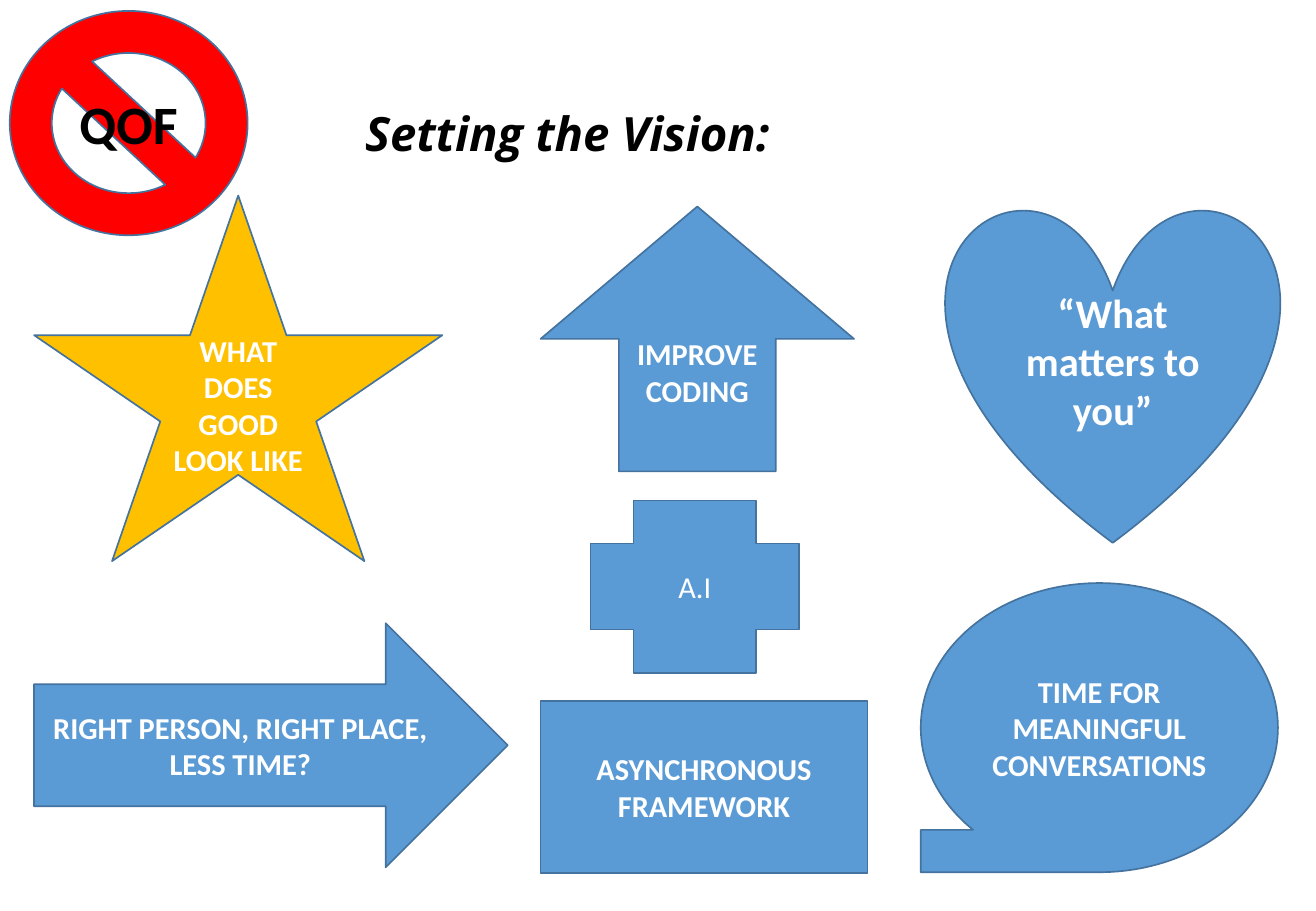
from dataclasses import dataclass

from pptx import Presentation
from pptx.dml.color import RGBColor
from pptx.enum.shapes import MSO_SHAPE
from pptx.enum.text import MSO_ANCHOR, PP_ALIGN
from pptx.util import Pt


@dataclass(frozen=True)
class Theme:
    blue: str = "5B9BD5"
    outline: str = "43739E"
    gold: str = "FFC000"
    red: str = "FF0000"
    white: str = "FFFFFF"
    black: str = "000000"
    body_font: str = "Calibri"
    title_font: str = "Open Sans"
    label_size: float = 18
    quote_size: float = 24
    title_size: float = 28
    sign_size: float = 32
    outline_width: float = 1


THEME = Theme()


def write_text(frame, text, *, size=THEME.label_size, color=THEME.white,
               font=THEME.body_font, bold=True, italic=False, line_spacing=None):
    frame.word_wrap = True
    frame.vertical_anchor = MSO_ANCHOR.MIDDLE
    frame.text = text
    for paragraph in frame.paragraphs:
        paragraph.alignment = PP_ALIGN.CENTER
        paragraph.line_spacing = line_spacing
        for run in paragraph.runs:
            run.font.name = font
            run.font.size = Pt(size)
            run.font.bold = bold
            run.font.italic = italic
            run.font.color.rgb = RGBColor.from_string(color)


def add_title(slide, text, box):
    title = slide.shapes.add_textbox(*map(Pt, box))
    write_text(title.text_frame, text, size=THEME.title_size, color=THEME.black,
               font=THEME.title_font, italic=True, line_spacing=0.9)


def add_symbol(slide, kind, text, box, fill=THEME.blue, **text_format):
    symbol = slide.shapes.add_shape(kind, *map(Pt, box))
    symbol.shadow.inherit = False
    symbol.fill.solid()
    symbol.fill.fore_color.rgb = RGBColor.from_string(fill)
    symbol.line.color.rgb = RGBColor.from_string(THEME.outline)
    symbol.line.width = Pt(THEME.outline_width)
    write_text(symbol.text_frame, text, **text_format)
    return symbol


def flip_horizontally(symbol):
    symbol._element.spPr.xfrm.set("flipH", "1")


def main():
    presentation = Presentation()
    presentation.slide_width = Pt(780)
    presentation.slide_height = Pt(540)
    slide = presentation.slides.add_slide(presentation.slide_layouts[6])

    add_title(slide, "Setting the Vision:", (0, 28.8, 672.5, 104.4))
    add_symbol(slide, MSO_SHAPE.NO_SYMBOL, "QOF", (5.8, 6.5, 141, 133),
               fill=THEME.red, size=THEME.sign_size, color=THEME.black)
    add_symbol(slide, MSO_SHAPE.STAR_5_POINT, "WHAT DOES GOOD LOOK LIKE",
               (20.2, 115.9, 242, 216.7), fill=THEME.gold)
    add_symbol(slide, MSO_SHAPE.RIGHT_ARROW, "RIGHT PERSON, RIGHT PLACE, LESS TIME?",
               (20.2, 369.4, 280.8, 144.7))
    add_symbol(slide, MSO_SHAPE.FLOWCHART_PROCESS, "ASYNCHRONOUS FRAMEWORK",
               (320.4, 415.4, 193.7, 102.2))
    add_symbol(slide, MSO_SHAPE.UP_ARROW, "IMPROVE\nCODING",
               (320.4, 122.4, 185.8, 157))
    conversations = add_symbol(slide, MSO_SHAPE.FLOWCHART_SEQUENTIAL_ACCESS_STORAGE,
                               "TIME FOR MEANINGFUL CONVERSATIONS",
                               (545.8, 345.6, 211.7, 171.4))
    flip_horizontally(conversations)
    add_symbol(slide, MSO_SHAPE.HEART, "“What matters to you”",
               (560.9, 122.4, 197.3, 199.4), size=THEME.quote_size)
    add_symbol(slide, MSO_SHAPE.CROSS, "A.I", (349.9, 296.6, 123.8, 102.2), bold=False)

    presentation.save("out.pptx")


if __name__ == "__main__":
    main()
